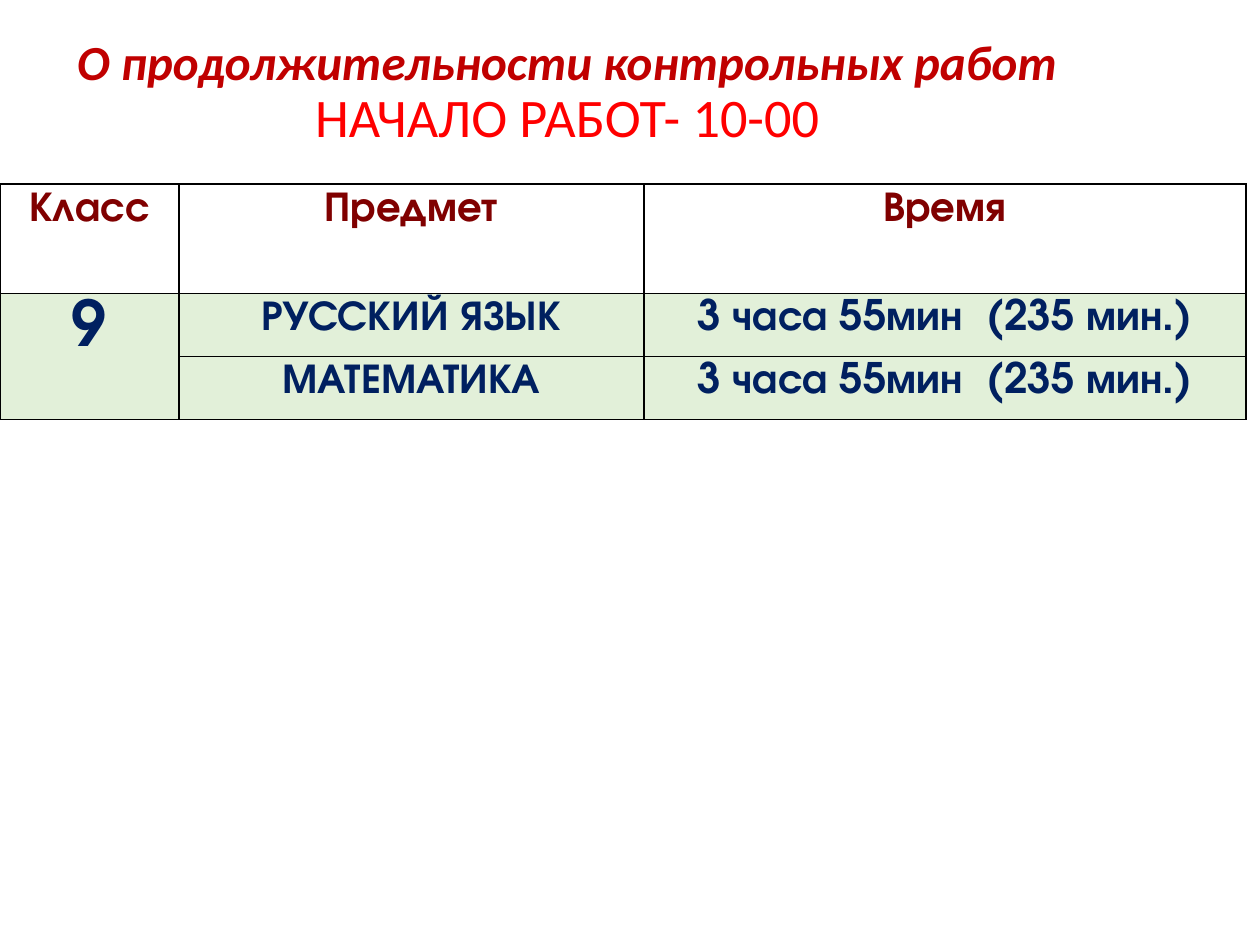
import pptx
import pptx.util
import pptx.dml.color
import pptx.enum.text
import pptx.oxml
import pptx.oxml.ns

Inches, Pt = pptx.util.Inches, pptx.util.Pt
RGB = pptx.dml.color.RGBColor.from_string
CENTER = pptx.enum.text.PP_ALIGN.CENTER
THEME = {
    "title_font": "Calibri", "table_font": "TeX Gyre Adventor",
    "title": "C00000", "start": "FF0000", "header": "800000", "body": "002060",
    "header_fill": "FFFFFF", "body_fill": "E2F0D9", "border": "000000",
    "title_size": 28, "start_size": 31, "table_size": 24, "grade_size": 36,
}


def add_borders(cell):
    for side in ("lnL", "lnR", "lnT", "lnB"):
        line = pptx.oxml.parse_xml(
            f'<a:{side} {pptx.oxml.ns.nsdecls("a")} w="{Pt(1)}"><a:solidFill>'
            f'<a:srgbClr val="{THEME["border"]}"/></a:solidFill></a:{side}>')
        cell.fill._xPr.append(line)


prs = pptx.Presentation()
prs.slide_width, prs.slide_height = Inches(10), Inches(7.5)
s = prs.slides.add_slide(prs.slide_layouts[5])

# Title: two lines in one paragraph
title = s.shapes.title
title.left, title.top = 0, Inches(0.21)
title.width, title.height = int(prs.slide_width * 0.9), Inches(1.07)
tf = title.text_frame
tf.word_wrap = True
tf.auto_size = pptx.enum.text.MSO_AUTO_SIZE.NONE
tf.vertical_anchor = pptx.enum.text.MSO_ANCHOR.MIDDLE
p = tf.paragraphs[0]
p.alignment, p.line_spacing = CENTER, 0.9
p.font.name = THEME["title_font"]
for text, role, emphasis in (
    ("О продолжительности контрольных работ", "title", True),
    ("НАЧАЛО РАБОТ- 10-00", "start", False),
):
    if p.runs:
        p.add_line_break()
    r = p.add_run()
    r.text = text
    r.font.size = Pt(THEME[role + "_size"])
    r.font.color.rgb = RGB(THEME[role])
    r.font.bold = r.font.italic = emphasis

# Timetable: one header row, then the subjects of one grade
duration = "3 часа 55мин  (235 мин.)"
rows = [
    ("Класс", "Предмет", "Время"),
    ("9", "РУССКИЙ ЯЗЫК", duration),
    ("", "МАТЕМАТИКА", duration),
]
col_widths, row_heights = (1.42, 3.69, 4.78), (0.87, 0.5, 0.5)
table = s.shapes.add_table(
    len(rows), len(col_widths), 0, Inches(1.46),
    Inches(sum(col_widths)), Inches(sum(row_heights))).table
for column, width in zip(table.columns, col_widths):
    column.width = Inches(width)
for row, height in zip(table.rows, row_heights):
    row.height = Inches(height)
table.cell(1, 0).merge(table.cell(2, 0))

for i, texts in enumerate(rows):
    role = "body" if i else "header"
    for j, text in enumerate(texts):
        cell = table.cell(i, j)
        add_borders(cell)
        cell.fill.solid()
        cell.fill.fore_color.rgb = RGB(THEME[role + "_fill"])
        if cell.is_spanned:
            continue
        cell.text = text
        p = cell.text_frame.paragraphs[0]
        p.alignment = CENTER
        p.font.name, p.font.bold = THEME["table_font"], True
        p.font.size = Pt(THEME["grade_size" if cell.is_merge_origin else "table_size"])
        p.font.color.rgb = RGB(THEME[role])

prs.save("out.pptx")
